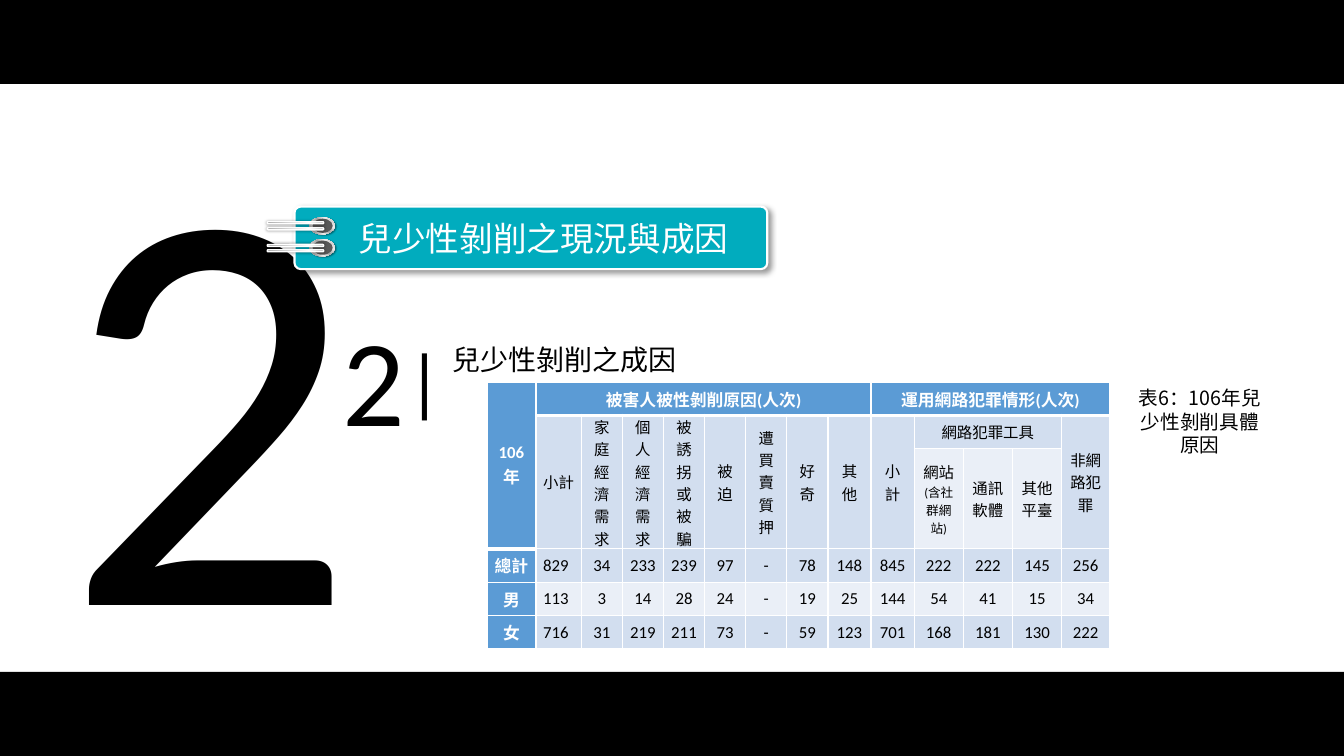
from lxml.etree import SubElement
from pptx import Presentation
from pptx.dml.color import RGBColor
from pptx.enum.shapes import MSO_SHAPE as Shape
from pptx.enum.text import MSO_ANCHOR as Anchor, PP_ALIGN as Align
from pptx.oxml import parse_xml
from pptx.oxml.ns import nsdecls, qn
from pptx.util import Emu, Inches, Pt

WIDTH, HEIGHT = Inches(13.33), Inches(7.5)
LATIN, CJK = "Calibri", "Noto Sans CJK SC"
BLACK = RGBColor(0x00, 0x00, 0x00)
WHITE = RGBColor(0xFF, 0xFF, 0xFF)
TEAL = RGBColor(0x01, 0xAC, 0xBE)
GRAY = RGBColor(0x59, 0x59, 0x59)
BLUE = RGBColor(0x5B, 0x9B, 0xD5)
PALE = RGBColor(0xD2, 0xDE, 0xEF)
LIGHT = RGBColor(0xEA, 0xEF, 0xF7)

RING_METAL = [(0, "FFFFFF"), (17, "A6A6A6"), (35, "F2F2F2"),
              (55, "A6A6A6"), (75, "F2F2F2"), (100, "A6A6A6")]
WIRE_METAL = [(0, "808080"), (23, "A6A6A6"), (52, "D9D9D9"),
              (74, "FFFFFF"), (100, "A6A6A6")]

COLUMN_WEIGHTS = [49, 45] + [41] * 6 + [43] * 2 + [49] * 3 + [48]
ROW_WEIGHTS = [1, 1, 3, 1, 1, 1]
REASONS = ["小計", "家庭經濟需求", "個人經濟需求", "被誘拐或被騙", "被迫",
           "遭買賣質押", "好奇", "其他", "小計"]
COUNTS = [
    ["總計", "829", "34", "233", "239", "97", "-", "78", "148",
     "845", "222", "222", "145", "256"],
    ["男", "113", "3", "14", "28", "24", "-", "19", "25",
     "144", "54", "41", "15", "34"],
    ["女", "716", "31", "219", "211", "73", "-", "59", "123",
     "701", "168", "181", "130", "222"],
]


def share(left, top, width, height):
    return [Emu(round(size * part / 100)) for size, part in
            zip((WIDTH, HEIGHT, WIDTH, HEIGHT), (left, top, width, height))]


def style_para(para, size, color, font=LATIN, bold=False, align=Align.LEFT):
    para.alignment = align
    for span in para.runs:
        span.font.size = Pt(size)
        span.font.bold = bold
        span.font.color.rgb = color
        span.font.name = font
        SubElement(span.font._element, qn("a:ea"), typeface=CJK)


def add_text(shapes, area, text, size, font=LATIN, align=Align.LEFT, indent=0):
    box = shapes.add_textbox(*share(*area))
    box.text_frame.word_wrap = True
    box.text_frame.text = text
    para = box.text_frame.paragraphs[0]
    if indent:
        para._p.get_or_add_pPr().set("marL", str(Inches(indent)))
    style_para(para, size, BLACK, font, align=align)


def add_block(shapes, kind, area, fill=None, line=None, rotation=0):
    block = shapes.add_shape(kind, *share(*area))
    block.shadow.inherit = False
    block.rotation = rotation
    if fill is not None:
        block.fill.solid()
        block.fill.fore_color.rgb = fill
    if line:
        block.line.color.rgb = WHITE
        block.line.width = Pt(line)
    else:
        block.line.fill.background()
    return block


def add_shadow(block, blur, distance, angle):
    effects = block._element.spPr.find(qn("a:effectLst"))
    effects.append(parse_xml(
        f'<a:outerShdw {nsdecls("a")} blurRad="{Pt(blur)}" dist="{Pt(distance)}" '
        f'dir="{angle * 60000}" algn="tl" rotWithShape="0"><a:srgbClr val="000000">'
        '<a:alpha val="40000"/></a:srgbClr></a:outerShdw>'))


def fill_metal(block, stops, angle):
    marks = "".join(f'<a:gs pos="{at * 1000}"><a:srgbClr val="{color}"/></a:gs>'
                    for at, color in stops)
    block._element.spPr.find(qn("a:prstGeom")).addnext(parse_xml(
        f'<a:gradFill {nsdecls("a")} rotWithShape="1"><a:gsLst>{marks}</a:gsLst>'
        f'<a:lin ang="{angle * 60000}" scaled="0"/></a:gradFill>'))


def add_banner(page):
    shapes = page.shapes.add_group_shape().shapes
    plate = add_block(shapes, Shape.ROUNDED_RECTANGLE, (21.91, 27.33, 35.18, 8.27), TEAL, 1.5)
    plate.adjustments[0] = 0.1
    add_shadow(plate, 4, 3, 45)
    for drop in (2.9, 0):
        ring = add_block(shapes, Shape.OVAL, (23.33, 28.2 + drop, 1.28, 3.33), rotation=270)
        fill_metal(ring, RING_METAL, 45)
        add_shadow(ring, 1, 1, 45)
        add_block(shapes, Shape.OVAL, (23.48, 28.53 + drop, 1.05, 2.67), GRAY, rotation=270)
    for top in (29.43, 28.73, 26.53, 25.73):
        wire = add_block(shapes, Shape.ROUNDED_RECTANGLE, (21.91, top, 0.15, 7.47),
                         line=1, rotation=270)
        wire.adjustments[0] = 0.5
        fill_metal(wire, WIRE_METAL, 90)
        add_shadow(wire, 2, 0, 0)


def set_title(page, text):
    title = page.shapes.title
    title.left, title.top, title.width, title.height = share(25.81, 28.13, 29.26, 6.67)
    title.element.getparent().append(title.element)
    frame = title.text_frame
    frame.text = text
    frame.word_wrap = False
    frame.vertical_anchor = Anchor.TOP
    style_para(frame.paragraphs[0], 24, WHITE, CJK, align=Align.CENTER)


def set_borders(cell, bottom):
    properties = cell._tc.get_or_add_tcPr()
    for side, width in (("L", 1), ("R", 1), ("T", 1), ("B", bottom)):
        properties.append(parse_xml(
            f'<a:ln{side} {nsdecls("a")} w="{Pt(width)}"><a:solidFill>'
            f'<a:srgbClr val="{WHITE}"/></a:solidFill></a:ln{side}>'))


def style_cell(cell, row, column):
    header = row == 0 or column == 0
    set_borders(cell, 3 if row == 0 or (column == 0 and row < 3) else 1)
    light = row == 4 or (row == 2 and 10 <= column <= 12)
    cell.fill.solid()
    cell.fill.fore_color.rgb = BLUE if header else LIGHT if light else PALE
    cell.margin_left = cell.margin_right = Inches(0.07)
    cell.margin_top = cell.margin_bottom = 0
    cell.vertical_anchor = Anchor.MIDDLE
    for para in cell.text_frame.paragraphs:
        size = 9 if para.text.startswith("(") else 11 if row in (1, 2) and not header else 12
        align = Align.LEFT if column == 1 and row > 2 else Align.CENTER
        style_para(para, size, WHITE if header else BLACK, bold=header, align=align)


def add_cause_table(page):
    rows = [
        ["106\n年", "被害人被性剝削原因(人次)"] + [""] * 7 + ["運用網路犯罪情形(人次)"] + [""] * 4,
        [""] + REASONS + ["網路犯罪工具", "", "", "非網路犯罪"],
        [""] * 10 + ["網站\n(含社群網站)", "通訊軟體", "其他平臺", ""],
    ] + COUNTS
    area = share(36.23, 50.53, 46.36, 35.33)
    table = page.shapes.add_table(len(rows), len(COLUMN_WEIGHTS), *area).table
    for column, weight in zip(table.columns, COLUMN_WEIGHTS):
        column.width = Emu(area[2] * weight // sum(COLUMN_WEIGHTS))
    for row, weight in zip(table.rows, ROW_WEIGHTS):
        row.height = Emu(area[3] * weight // sum(ROW_WEIGHTS))
    for row, texts in enumerate(rows):
        for column, text in enumerate(texts):
            cell = table.cell(row, column)
            cell.text_frame.text = text
            style_cell(cell, row, column)
    spans = [(0, 0, 2, 0), (0, 1, 0, 8), (0, 9, 0, 13), (1, 10, 1, 12)]
    spans += [(1, column, 2, column) for column in [*range(1, 10), 13]]
    for top, left, bottom, right in spans:
        table.cell(top, left).merge(table.cell(bottom, right))


def main():
    deck = Presentation()
    deck.slide_width, deck.slide_height = WIDTH, HEIGHT
    page = deck.slides.add_slide(deck.slide_layouts[5])
    for top in (0, 88.89):
        add_block(page.shapes, Shape.RECTANGLE, (0, top, 100, 11.11), BLACK)
    heading = page.shapes.add_group_shape().shapes
    add_text(heading, (32.93, 44.67, 42.31, 5.87), "兒少性剝削之成因", 20)
    add_text(heading, (25.81, 43.33, 14.25, 13.47), "|", 54, indent=0.5)
    add_text(heading, (24.76, 39.47, 14.25, 21.07), "2", 88)
    add_text(page.shapes, (3.98, 2.93, 14.25, 94), "2", 413)
    add_banner(page)
    set_title(page, "兒少性剝削之現況與成因")
    add_text(page.shapes, (83.5, 50.4, 11.55, 10.8), "表6：106年兒少性剝削具體原因",
             14, CJK, Align.CENTER)
    add_cause_table(page)
    deck.save("out.pptx")


if __name__ == "__main__":
    main()
